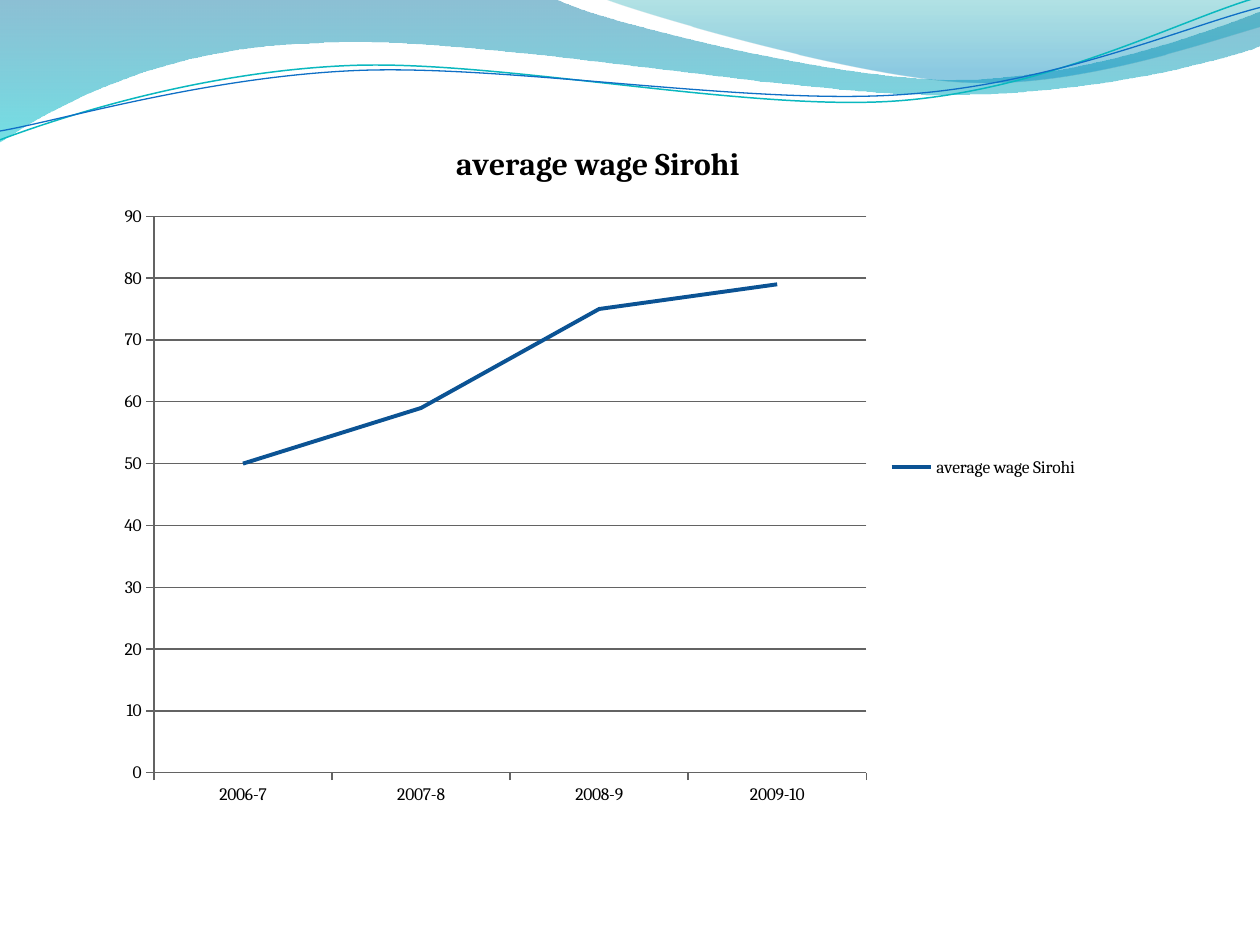
import math
from dataclasses import dataclass

from lxml import etree
from pptx import Presentation
from pptx.chart.data import CategoryChartData
from pptx.dml.color import RGBColor
from pptx.enum import chart as kinds
from pptx.oxml import ns
from pptx.util import Inches, Pt


@dataclass(frozen=True)
class Theme:
    """Colours, type sizes and line widths of the deck."""
    font: str = "Cambria"
    ink: str = "000000"
    axis: str = "636363"
    series: str = "0B5394"
    teal: str = "0AB8BF"
    blue: str = "0F6FC6"
    back_wave: tuple = ((0, "0074A1", 45), (100, "00C6CF", 55))
    front_wave: tuple = ((0, "00A1A9", 30), (80, "008BBF", 45))
    title_size: int = 18
    label_size: int = 10
    series_width: float = 2.25
    axis_width: float = 0.75


@dataclass(frozen=True)
class Box:
    """A region of the page, in EMU, with a grid of columns and rows."""
    left: int
    top: int
    width: int
    height: int

    def point(self, column, row):
        """Return the place of a grid point."""
        return (round(self.left + column * self.width / COLUMNS),
                round(self.top + row * self.height / ROWS))

    def cell(self, column, row, columns, rows):
        """Return a part of this box given in columns and rows."""
        left, top = self.point(column, row)
        right, bottom = self.point(column + columns, row + rows)
        return Box(left, top, right - left, bottom - top)


THEME = Theme()
COLUMNS, ROWS = 10, 7.5
TILT = 357.3
BACK_WAVE = [(0, 0), (4.4, -0.01),
             ((4.76, 0.17), (6.64, 0.63), (7.58, 0.63)),
             ((8.53, 0.63), (9.58, 0.26), (10, 0.09)),
             (10.01, 0.36),
             ((9.83, 0.44), (8.7, 0.76), (7.46, 0.75)),
             ((6.22, 0.75), (3.82, 0.28), (2.57, 0.34)),
             ((1.29, 0.36), (0.46, 0.83), (-0.01, 1.13))]
FRONT_WAVE = [(4.79, -0.01),
              ((5.09, 0.11), (6.82, 0.62), (7.69, 0.65)),
              ((8.56, 0.69), (9.61, 0.32), (10, 0.21)),
              (10, 0)]
TEAL_LINE = [(0, 1.11),
             ((0.48, 0.93), (1.58, 0.57), (2.77, 0.52)),
             ((3.95, 0.47), (5.93, 0.89), (7.13, 0.8)),
             ((8.33, 0.71), (9.38, 0.15), (9.98, -0.02))]
BLUE_LINE = [(0, 1.04),
             ((0.47, 0.96), (1.64, 0.61), (2.83, 0.56)),
             ((4.03, 0.51), (5.97, 0.84), (7.17, 0.75)),
             ((8.36, 0.67), (9.41, 0.21), (10, 0.06))]
WAGES = {"2006-7": 50, "2007-8": 59, "2008-9": 75, "2009-10": 79}


def rgb(code):
    """Return a colour from its hexadecimal code."""
    return RGBColor.from_string(code)


def is_curve(part):
    """Tell whether a part of an outline is a curve."""
    return len(part) == 3


def turn(point, pivot, degrees):
    """Turn a point clockwise about a pivot."""
    angle = math.radians(degrees)
    x, y = point[0] - pivot[0], point[1] - pivot[1]
    return (round(pivot[0] + x * math.cos(angle) - y * math.sin(angle)),
            round(pivot[1] + x * math.sin(angle) + y * math.cos(angle)))


def bend(shape, outline):
    """Join the line segments of each curved part into one cubic curve."""
    segments = iter(list(shape.element.iter(ns.qn("a:lnTo"))))
    for part in outline[1:]:
        first = next(segments)
        if is_curve(part):
            curve = etree.Element(ns.qn("a:cubicBezTo"))
            first.addprevious(curve)
            for segment in (first, next(segments), next(segments)):
                curve.append(segment[0])
                segment.getparent().remove(segment)


def add_outline(shapes, box, outline, closed, pivot=None):
    """Draw an outline of corners and curves, tilted when a pivot is given."""
    corners = [corner for part in outline for corner in (part if is_curve(part) else [part])]
    points = [box.point(*corner) for corner in corners]
    if pivot:
        points = [turn(point, box.point(*pivot), -TILT) for point in points]
    builder = shapes.build_freeform(*points[0], scale=1.0)
    builder.add_line_segments(points[1:], close=closed)
    shape = builder.convert_to_shape()
    bend(shape, outline)
    shape.shadow.inherit = False
    shape.rotation = TILT if pivot else 0
    return shape


def add_wave(shapes, box, outline, stops):
    """Draw a band with a see-through gradient running downwards."""
    wave = add_outline(shapes, box, outline, closed=True)
    wave.line.fill.background()
    wave.fill.gradient()
    wave.fill.gradient_angle = 270
    for stop, (position, code, opacity) in zip(wave.fill.gradient_stops, stops):
        stop.position = position / 100
        stop.color.rgb = rgb(code)
    colours = wave.element.spPr.iter(ns.qn("a:srgbClr"))
    for colour, (position, code, opacity) in zip(colours, stops):
        etree.SubElement(colour, ns.qn("a:alpha"), val=str(opacity * 1000))


def add_ribbon(shapes, box, outline, pivot, code, width):
    """Draw a thin open curve."""
    ribbon = add_outline(shapes, box, outline, closed=False, pivot=pivot)
    ribbon.fill.background()
    style_line(ribbon.line, code, width)


def style_line(line, code, width):
    """Set the colour and width of a line."""
    line.color.rgb = rgb(code)
    line.width = Pt(width)


def style_font(font, size, bold=False):
    """Set the typeface, size, weight and colour of a font."""
    font.name, font.size, font.bold = THEME.font, Pt(size), bold
    font.color.rgb = rgb(THEME.ink)


def add_banner(page, box):
    """Draw the waves and the pair of ribbons across the top of the page."""
    add_wave(page.shapes, box, BACK_WAVE, THEME.back_wave)
    add_wave(page.shapes, box, FRONT_WAVE, THEME.front_wave)
    ribbons = page.shapes.add_group_shape().shapes
    add_ribbon(ribbons, box, TEAL_LINE, (4.99, 0.58), THEME.teal, 0.85)
    add_ribbon(ribbons, box, BLUE_LINE, (5, 0.59), THEME.blue, 0.75)


def add_wage_chart(page, box, name, wages):
    """Draw the line chart of wages with its title and legend."""
    data = CategoryChartData()
    data.categories = list(wages)
    data.add_series(name, list(wages.values()))
    chart = page.shapes.add_chart(kinds.XL_CHART_TYPE.LINE, box.left, box.top,
                                  box.width, box.height, data).chart
    style_font(chart.font, THEME.label_size)
    chart.has_title = True
    chart.chart_title.include_in_layout = False
    chart.chart_title.text_frame.text = name
    span = chart.chart_title.text_frame.paragraphs[0].runs[0]
    style_font(span.font, THEME.title_size, bold=True)
    chart.has_legend = True
    chart.legend.position = kinds.XL_LEGEND_POSITION.RIGHT
    chart.legend.include_in_layout = False
    for axis in (chart.category_axis, chart.value_axis):
        axis.major_tick_mark = kinds.XL_TICK_MARK.OUTSIDE
        axis.minor_tick_mark = kinds.XL_TICK_MARK.NONE
        style_line(axis.format.line, THEME.axis, THEME.axis_width)
    scale = chart.value_axis
    scale.minimum_scale, scale.maximum_scale, scale.major_unit = 0, 90, 10
    scale.has_major_gridlines = True
    style_line(scale.major_gridlines.format.line, THEME.axis, THEME.axis_width)
    chart.plots[0].vary_by_categories = False
    series = chart.plots[0].series[0]
    series.smooth = False
    series.marker.style = kinds.XL_MARKER_STYLE.NONE
    style_line(series.format.line, THEME.series, THEME.series_width)


def main():
    """Build the deck and save it."""
    deck = Presentation()
    deck.slide_width, deck.slide_height = Inches(COLUMNS), Inches(ROWS)
    page = deck.slides.add_slide(deck.slide_layouts[6])
    whole = Box(0, 0, deck.slide_width, deck.slide_height)
    add_banner(page, whole)
    add_wage_chart(page, whole.cell(0.83, 0.92, 7.83, 5.58), "average wage Sirohi", WAGES)
    deck.save("out.pptx")


if __name__ == "__main__":
    main()
